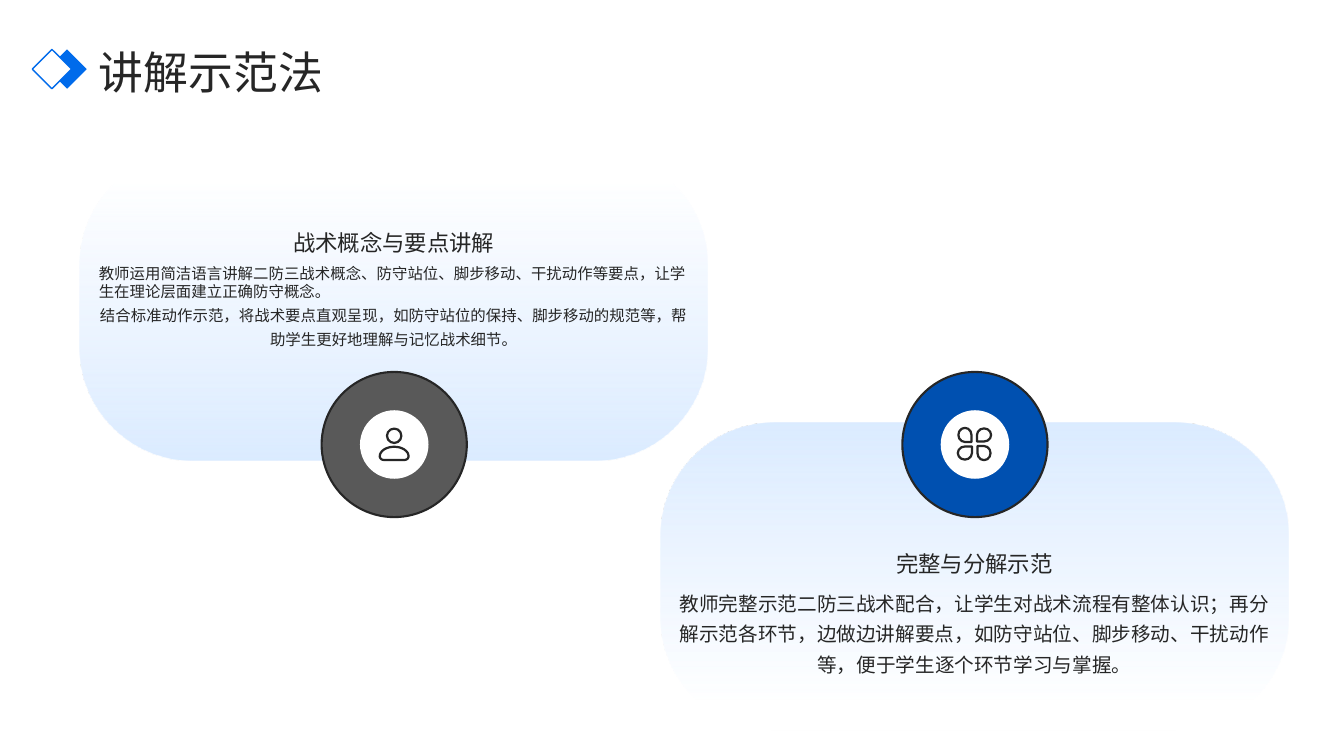
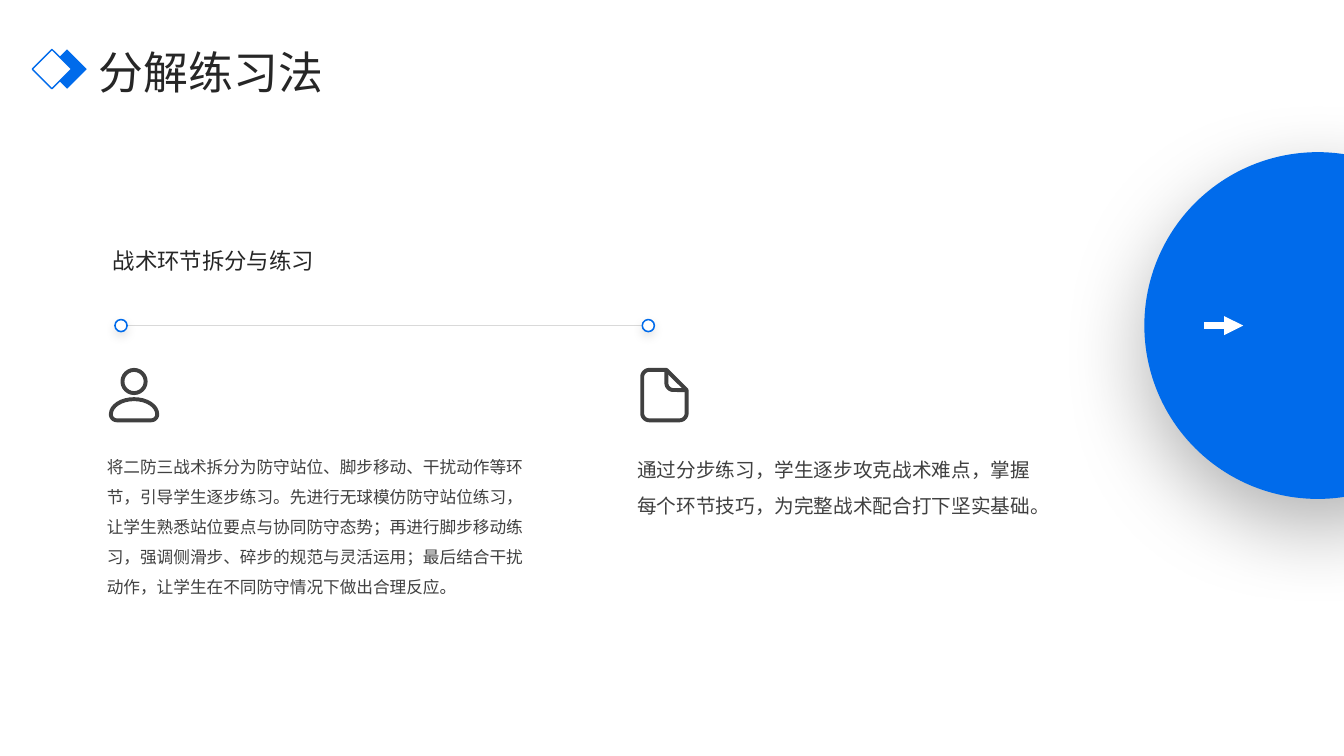
from math import cos, radians, sin

from lxml import etree
from pptx import Presentation
from pptx.dml.color import RGBColor
from pptx.enum import shapes, text
from pptx.oxml import ns
from pptx.util import Inches, Pt


class Theme:
    font = "Noto Sans CJK SC"
    blue, navy, pale = "006BEB", "0050B0", "C8E1FF"
    ink, soft, gray, rule = "262626", "404040", "595959", "D9D9D9"
    white, black = "FFFFFF", "000000"
    title, head, body, small, note = 32, 16, 14, 11.9, 11


KIND = shapes.MSO_SHAPE
LEFT, MID = text.PP_ALIGN.LEFT, text.PP_ALIGN.CENTER
TOP, CENTER, BASE = (text.MSO_ANCHOR.TOP, text.MSO_ANCHOR.MIDDLE,
                     text.MSO_ANCHOR.BOTTOM)


def draw(slide, kind, box, fill=None, line=None, width=1, shadow=None):
    """Add a preset in box, or, if kind is a list of arcs, their outline.

    An arc is (x, y, rx, ry, start, end); box then says if it closes.
    A shadow is (alpha %, blur pt, distance pt), cast downwards.
    """
    if isinstance(kind, list):
        dots = [(Inches(x + rx * cos(radians(a + (b - a) * i / 16))),
                 Inches(y + ry * sin(radians(a + (b - a) * i / 16))))
                for x, y, rx, ry, a, b in kind for i in range(17 if rx else 1)]
        pen = slide.shapes.build_freeform(*dots[0], scale=1)
        pen.add_line_segments(dots[1:], close=box)
        shape = pen.convert_to_shape()
    else:
        shape = slide.shapes.add_shape(kind, *map(Inches, box))
    shape.shadow.inherit = False
    if fill:
        shape.fill.solid()
        shape.fill.fore_color.rgb = RGBColor.from_string(fill)
    else:
        shape.fill.background()
    if line:
        shape.line.color.rgb = RGBColor.from_string(line)
        shape.line.width = Pt(width)
    else:
        shape.line.fill.background()
    if shadow:
        alpha, blur, dist = shadow
        glow = etree.SubElement(
            shape.element.spPr.find(ns.qn("a:effectLst")), ns.qn("a:outerShdw"),
            blurRad=str(Pt(blur)), dist=str(Pt(dist)), dir="5400000",
            algn="t", rotWithShape="0")
        tint = etree.SubElement(glow, ns.qn("a:srgbClr"), val=Theme.black)
        etree.SubElement(tint, ns.qn("a:alpha"), val=str(alpha * 1000))
    return shape


def write(slide, box, size, color, anchor, *paras):
    """Add a text box; each paragraph is (words, alignment, line spacing)."""
    frame = slide.shapes.add_textbox(*map(Inches, box)).text_frame
    frame.word_wrap = True
    frame.vertical_anchor = anchor
    frame.margin_left = frame.margin_right = 0
    frame.margin_top = frame.margin_bottom = 0
    for i, (words, align, gap) in enumerate(paras):
        para = frame.add_paragraph() if i else frame.paragraphs[0]
        para.text = words
        para.alignment, para.line_spacing = align, gap
        font = para.font
        font.size, font.name = Pt(size), Theme.font
        font.color.rgb = RGBColor.from_string(color)
        etree.SubElement(para._p.pPr.find(ns.qn("a:defRPr")), ns.qn("a:ea"),
                         typeface=Theme.font)


deck = Presentation()
deck.slide_width, deck.slide_height = Inches(13.33), Inches(7.5)

# Shared title and diamonds
pages = []
for title in ("讲解示范法", "分解练习法"):
    page = deck.slides.add_slide(deck.slide_layouts[6])
    write(page, (0.98, 0.43, 11.61, 0.51), Theme.title, Theme.ink, CENTER,
          (title, LEFT, 1.1))
    draw(page, KIND.DIAMOND, (0.47, 0.49, 0.39, 0.39), Theme.blue)
    draw(page, KIND.DIAMOND, (0.32, 0.49, 0.39, 0.39), Theme.white, Theme.blue)
    pages.append(page)
demo, drill = pages

# Slide 1: two fading cards, each with a badge
cards = (
    (6.55, 4.19, 90, Theme.navy, 5.12, "完整与分解示范", Theme.body,
     [("教师完整示范二防三战术配合，让学生对战术流程有整体认识；再分解示范各环节，"
       "边做边讲解要点，如防守站位、脚步移动、干扰动作等，便于学生逐个环节学习与掌握。",
       MID, 1.3)]),
    (0.79, 1.51, 270, Theme.gray, 1.94, "战术概念与要点讲解", Theme.note,
     [("教师运用简洁语言讲解二防三战术概念、防守站位、脚步移动、干扰动作等要点，"
       "让学生在理论层面建立正确防守概念。", LEFT, 1),
      ("结合标准动作示范，将战术要点直观呈现，如防守站位的保持、脚步移动的规范等，"
       "帮助学生更好地理解与记忆战术细节。", MID, 1.3)]),
)
for x, y, angle, color, top, head, size, paras in cards:
    card = draw(demo, KIND.ROUNDED_RECTANGLE, (x, y, 6.23, 3.06))
    card.adjustments[0] = 0.368
    card.fill.gradient()
    card.fill.gradient_angle = angle
    for stop, place in zip(card.fill.gradient_stops, (0.1, 1)):
        stop.position = place
        stop.color.rgb = RGBColor.from_string(Theme.pale)
    for tint, alpha in zip(card.element.xpath(".//a:gs/a:srgbClr"), (0, 65000)):
        etree.SubElement(tint, ns.qn("a:alpha"), val=str(alpha))
    draw(demo, KIND.OVAL, (x + 2.4, 3.69, 1.44, 1.44), color, Theme.ink, 1.5)
    draw(demo, KIND.OVAL, (x + 2.78, 4.07, 0.68, 0.68), Theme.white)
    write(demo, (x + 0.19, top, 5.85, 0.6), Theme.head, Theme.ink, BASE,
          (head, MID, 1))
    write(demo, (x + 0.19, top + 0.68, 5.85, 0.97), size, Theme.ink, TOP, *paras)

# Clover icon: four petals pointing at the middle
for x, y, turn in ((9.5, 4.25, 90), (9.69, 4.25, 180),
                   (9.69, 4.43, 270), (9.5, 4.43, 0)):
    petal = draw(demo, KIND.TEAR, (x, y, 0.14, 0.13), None, Theme.ink, 1.6)
    petal.rotation = turn

# Slide 2: disc with arrow, and a line between two dots
draw(drill, KIND.OVAL, (11.35, 1.51, 3.44, 3.44), Theme.blue,
     shadow=(30, 60, 20))
for start, end, color, width in ((11.94, 12.33, Theme.white, 4.5),
                                 (1.22, 6.49, Theme.rule, 0.82)):
    wire = drill.shapes.add_connector(
        shapes.MSO_CONNECTOR.STRAIGHT, Inches(start), Inches(3.23),
        Inches(end), Inches(3.23))
    wire.line.color.rgb = RGBColor.from_string(color)
    wire.line.width = Pt(width)
    if color == Theme.white:
        etree.SubElement(wire.line._get_or_add_ln(), ns.qn("a:tailEnd"),
                         type="triangle")
    etree.SubElement(wire.element.spPr, ns.qn("a:effectLst"))
for x in (1.14, 6.37):
    draw(drill, KIND.OVAL, (x, 3.17, 0.12, 0.12), Theme.white, Theme.blue, 1.1,
         (11, 7, 3))

# Person icons
for page, x, y, k, color, width in ((demo, 3.91, 4.24, 0.62, Theme.ink, 1.6),
                                    (drill, 1.33, 3.65, 1, Theme.soft, 2.8)):
    r = 0.115 * k
    draw(page, KIND.OVAL, (x - r, y + 0.02 * k, 2 * r, 2 * r), None, color, width)
    draw(page, [(x, y + 0.46 * k, 0.23 * k, 0.15 * k, 180, 360),
                (x + 0.17 * k, y + 0.46 * k, 0.06 * k, 0.06 * k, 0, 90),
                (x - 0.17 * k, y + 0.46 * k, 0.06 * k, 0.06 * k, 90, 180)],
         True, None, color, width)

# Page icon: sheet and folded corner
fold = [(6.61, 3.67, 0, 0, 0, 0), (6.81, 3.87, 0, 0, 0, 0)]
draw(drill, [(6.44, 3.74, 0.07, 0.07, 180, 270), *fold,
             (6.74, 4.1, 0.07, 0.07, 0, 90), (6.44, 4.1, 0.07, 0.07, 90, 180)],
     True, None, Theme.soft, 2.8)
draw(drill, [fold[0], (6.68, 3.8, 0.07, 0.07, 180, 90), fold[1]],
     False, None, Theme.soft, 2.8)

write(drill, (1.12, 1.39, 9.78, 1.33), Theme.head, Theme.ink, BASE,
      ("战术环节拆分与练习", LEFT, 1.5))
for x, wide, size, words in (
        (1.06, 4.16, Theme.small,
         "将二防三战术拆分为防守站位、脚步移动、干扰动作等环节，引导学生逐步练习。"
         "先进行无球模仿防守站位练习，让学生熟悉站位要点与协同防守态势；"
         "再进行脚步移动练习，强调侧滑步、碎步的规范与灵活运用；"
         "最后结合干扰动作，让学生在不同防守情况下做出合理反应。"),
        (6.32, 4.08, Theme.body,
         "通过分步练习，学生逐步攻克战术难点，掌握每个环节技巧，"
         "为完整战术配合打下坚实基础。")):
    write(drill, (x, 4.43, wide, 1.73), size, Theme.soft, TOP, (words, LEFT, 1.5))

deck.save("out.pptx")
